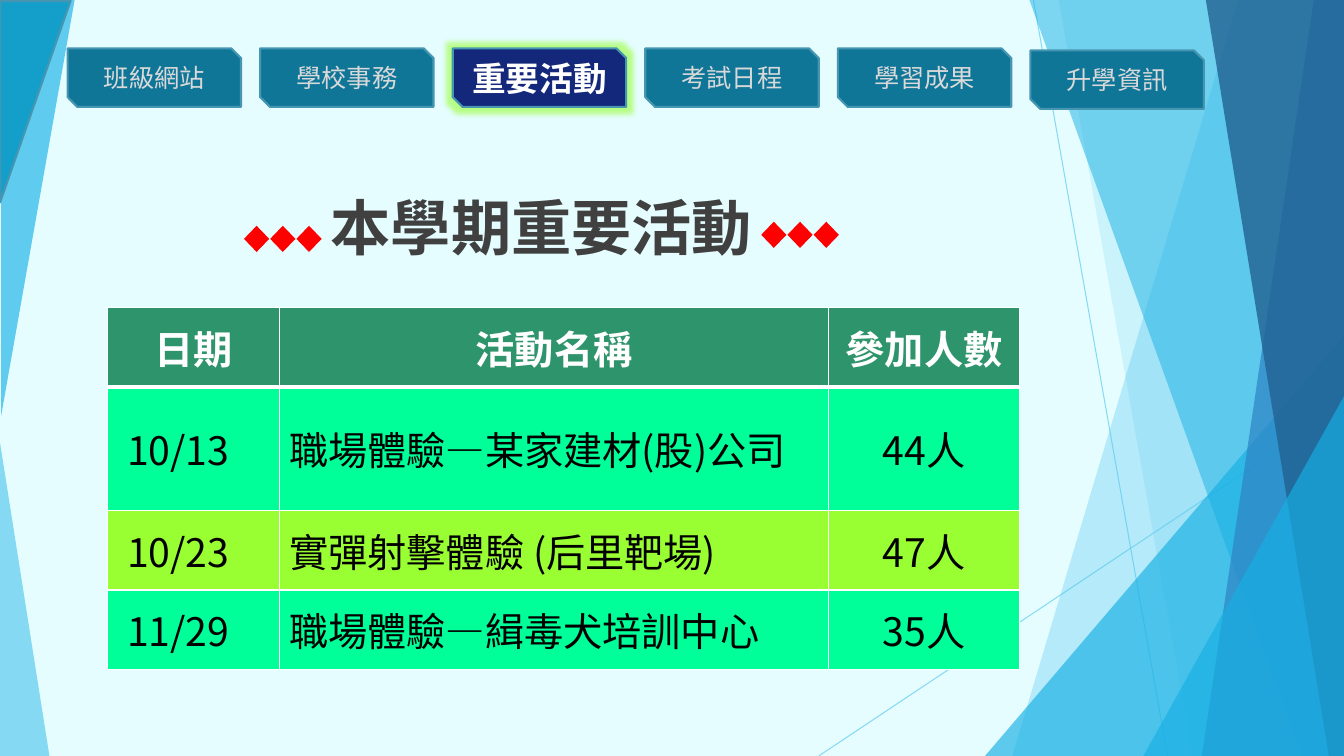
from lxml import etree
from pptx import Presentation
from pptx.dml.color import RGBColor
from pptx.enum import shapes, text
from pptx.oxml.ns import qn
from pptx.util import Inches, Pt

W, H = 13.33, 7.5
CJK = "Noto Sans CJK TC"
COLORS = {
    "page": "E5FDFF", "sky": "5FCBEF", "azure": "17B0E4", "blue": "2E83C3",
    "navy": "226292", "corner": "149FCA", "edge": "4696B1", "tab": "0F7698",
    "tab_on": "13277B", "tab_text": "D9D9D9", "white": "FFFFFF",
    "black": "000000", "title": "404040", "red": "FF0000", "glow": "99FF33",
    "header": "2E946B", "mint": "00FF99", "lime": "99FF33",
}
TABS = ["班級網站", "學校事務", "重要活動", "考試日程", "學習成果", "升學資訊"]
ACTIVE_TAB = "重要活動"
HEADERS = ["日期", "活動名稱", "參加人數"]
EVENTS = [
    ["10/13", "職場體驗—某家建材(股)公司", "44人"],
    ["10/23", "實彈射擊體驗 (后里靶場)", "47人"],
    ["11/29", "職場體驗—緝毒犬培訓中心", "35人"],
]


def rgb(name):
    return RGBColor.from_string(COLORS[name])


def add_xml(parent, tag, **attrs):
    return etree.SubElement(parent, qn(tag), attrs)


def set_alpha(color_parent, percent):
    clr = next(color_parent.iter(qn("a:srgbClr")))
    add_xml(clr, "a:alpha", val=str(percent * 1000))


def paint(sp, fill, alpha=None, line=None):
    sp.shadow.inherit = False
    sp.fill.solid()
    sp.fill.fore_color.rgb = rgb(fill)
    if alpha:
        set_alpha(sp._element.spPr.find(qn("a:solidFill")), alpha)
    if line:
        sp.line.color.rgb = rgb(line)
        sp.line.width = Pt(1.5)
    else:
        sp.line.fill.background()


def write(tf, words, size=18, color="black", bold=False, font="Cabin",
          align=text.PP_ALIGN.CENTER, anchor=text.MSO_ANCHOR.MIDDLE):
    tf.word_wrap = True
    tf.vertical_anchor = anchor
    p = tf.paragraphs[0]
    p.alignment = align
    r = p.add_run()
    r.text = words
    r.font.size, r.font.bold, r.font.name = Pt(size), bold, font
    r.font.color.rgb = rgb(color)
    add_xml(r._r.get_or_add_rPr(), "a:ea", typeface=CJK)
    return p


def add_preset(s, kind, x, y, w, h, fill, **look):
    sp = s.shapes.add_shape(kind, Inches(x), Inches(y), Inches(w), Inches(h))
    paint(sp, fill, **look)
    return sp


def add_triangle(s, x, y, w, h, fill, apex, turn=0, **look):
    """Right-angled triangle: apex 0 is above the left end, 1 the right."""
    sp = add_preset(s, shapes.MSO_SHAPE.ISOSCELES_TRIANGLE, x, y, w, h, fill, **look)
    sp.adjustments[0] = apex
    sp.rotation = turn


def add_band(s, top_x, bottom_x, fill, alpha):
    """Full-height band from a slanted left edge to the right slide edge."""
    points = [(top_x, 0), (W, 0), (W, H), (bottom_x, H)]
    points = [(Inches(x), Inches(y)) for x, y in points]
    fb = s.shapes.build_freeform(*points[0])
    fb.add_line_segments(points[1:], close=True)
    paint(fb.convert_to_shape(), fill, alpha)


def add_thin_line(s, x1, y1, x2, y2):
    c = s.shapes.add_connector(shapes.MSO_CONNECTOR.STRAIGHT, Inches(x1),
                               Inches(y1), Inches(x2), Inches(y2))
    c.line.color.rgb = rgb("sky")
    c.line.width = Pt(0.75)
    spPr = c._element.spPr
    set_alpha(spPr, 70)
    add_xml(spPr, "a:effectLst")


def draw_backdrop(s):
    add_thin_line(s, 10.25, 0, 11.58, H)
    add_thin_line(s, W, 4.03, 8.12, H)
    add_band(s, 12.28, 10.04, "sky", 36)
    add_band(s, 10.5, 11.83, "sky", 20)
    add_triangle(s, 9.77, 3.33, 3.56, 4.17, "azure", 1, alpha=66)
    add_band(s, 10.21, 12.91, "azure", 50)
    add_band(s, 13.03, 11.92, "blue", 70)
    add_band(s, 11.96, 13.18, "navy", 80)
    add_triangle(s, 11.34, 3.93, 1.99, 3.57, "azure", 1, alpha=66)
    add_triangle(s, 0, 4.39, 0.49, 3.11, "sky", 0, alpha=70)
    add_triangle(s, 0.01, 0, 0.73, 4.13, "sky", 1, turn=180)
    add_triangle(s, -0.65, 0.66, 2, 0.7, "corner", 0, turn=90, line="edge")


def draw_tabs(s, x, y, w, h, pitch):
    for i, label in enumerate(TABS):
        on = label == ACTIVE_TAB
        drop = 0.02 if i == len(TABS) - 1 else 0
        sp = add_preset(s, shapes.MSO_SHAPE.SNIP_2_DIAG_RECTANGLE, x + i * pitch,
                        y + drop, w, h, "tab_on" if on else "tab", line="edge")
        write(sp.text_frame, label, size=24 if on else 18, bold=on,
              color="white" if on else "tab_text", font=CJK if i < 2 else "Cabin")
        if on:
            effects = sp._element.spPr.find(qn("a:effectLst"))
            glow = add_xml(effects, "a:glow", rad=str(Pt(8)))
            add_xml(glow, "a:srgbClr", val=COLORS["glow"])
            set_alpha(glow, 60)


def draw_title(s, x, y, w, h):
    title = s.shapes.title
    title.left, title.top, title.width, title.height = map(Inches, (x, y, w, h))
    p = write(title.text_frame, "本學期重要活動", size=43, color="title", bold=True,
              align=text.PP_ALIGN.LEFT, anchor=text.MSO_ANCHOR.TOP)
    p.line_spacing = 0.9
    size, step = 0.25, 0.26
    for start, top in ((x - 0.76, y + 0.32), (x + w - 0.13, y + 0.28)):
        for i in range(3):
            add_preset(s, shapes.MSO_SHAPE.DIAMOND, start + i * step, top,
                       size, 0.26, "red")


def format_cell(cell, fill, bottom):
    cell.fill.solid()
    cell.fill.fore_color.rgb = rgb(fill)
    tcPr = cell._tc.get_or_add_tcPr()
    for i, (side, width) in enumerate(zip("LRTB", (1, 1, 1, bottom))):
        ln = add_xml(tcPr, f"a:ln{side}", w=str(Pt(width)))
        add_xml(add_xml(ln, "a:solidFill"), "a:srgbClr", val=COLORS["white"])
        tcPr.insert(i, ln)


def draw_events(s, x, y, widths, row_h):
    rows = [HEADERS] + EVENTS
    table = s.shapes.add_table(len(rows), len(widths), Inches(x), Inches(y),
                               Inches(sum(widths)), Inches(row_h * len(rows))).table
    for column, width in zip(table.columns, widths):
        column.width = Inches(width)
    for i, row in enumerate(rows):
        head = i == 0
        table.rows[i].height = Inches(row_h)
        for j, words in enumerate(row):
            cell = table.cell(i, j)
            format_cell(cell, "header" if head else ("lime", "mint")[i % 2],
                        3 if head else 1)
            centred = head or j == 2
            p = write(cell.text_frame, words, size=28, bold=head,
                      color="white" if head else "black", font="Noto Sans CJK SC",
                      align=text.PP_ALIGN.CENTER if centred else text.PP_ALIGN.LEFT)
            cell.vertical_anchor = text.MSO_ANCHOR.MIDDLE
            if j < 2:
                first = 0.09 if j == 0 and not head else 0
                pPr = p._p.get_or_add_pPr()
                pPr.set("marL", str(Inches(0.38)))
                pPr.set("indent", str(Inches(first - 0.38)))


def main():
    prs = Presentation()
    prs.slide_width, prs.slide_height = Inches(W), Inches(H)
    s = prs.slides.add_slide(prs.slide_layouts[5])
    s.background.fill.solid()
    s.background.fill.fore_color.rgb = rgb("page")
    draw_backdrop(s)
    draw_tabs(s, 0.67, 0.48, 1.72, 0.58, pitch=1.91)
    draw_title(s, 3.18, 1.92, 4.5, 0.95)
    draw_events(s, 1.07, 3.05, [1.7, 5.45, 1.89], 0.79)
    prs.save("out.pptx")


if __name__ == "__main__":
    main()
